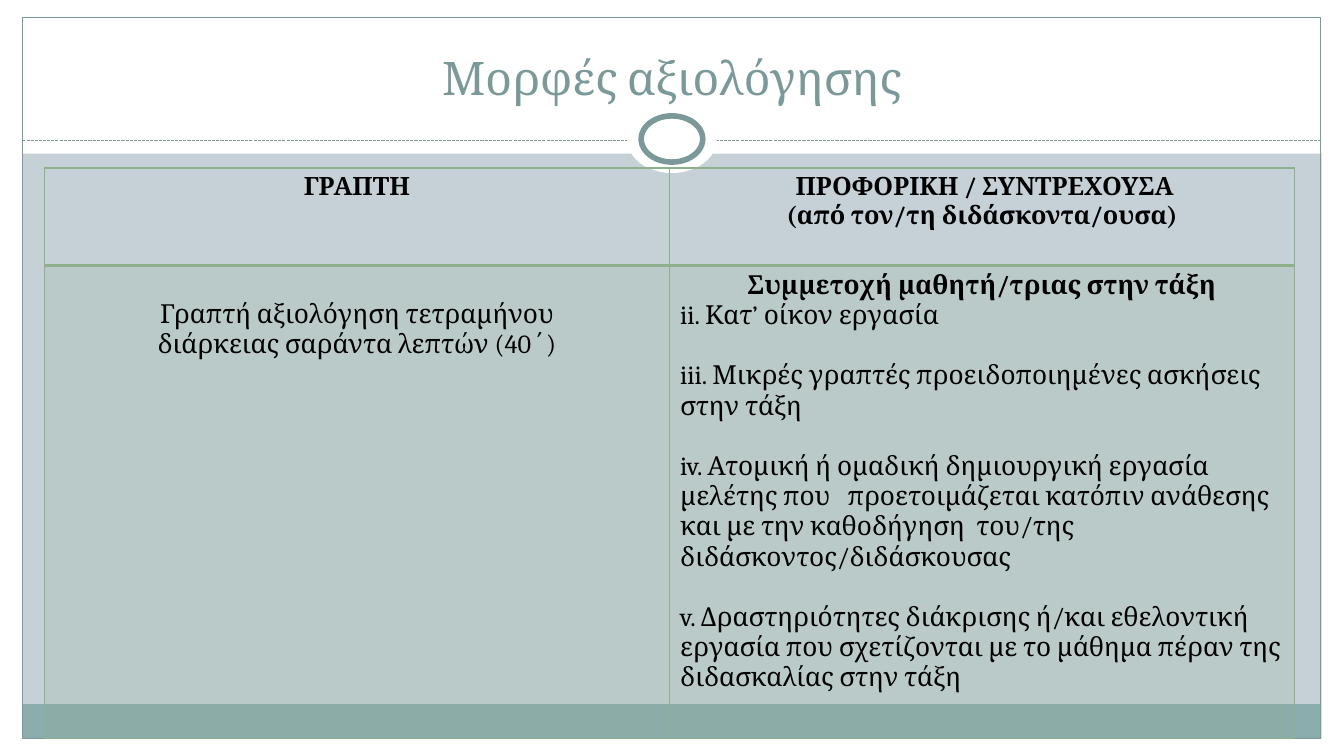
import dataclasses
import typing

import lxml.etree
import pptx
import pptx.dml.color
import pptx.enum.dml
import pptx.enum.shapes
import pptx.enum.text
import pptx.oxml
import pptx.oxml.ns
import pptx.util

Pt = pptx.util.Pt
SHAPE = pptx.enum.shapes.MSO_SHAPE
ALIGN = pptx.enum.text.PP_ALIGN
qn = pptx.oxml.ns.qn

FONT = "Cambria"
COLORS = {
    "ground": "C5D1D7",
    "white": "FFFFFF",
    "band": "8CADAE",
    "teal": "7C999A",
    "green": "8FB08C",
    "black": "000000",
}
WIDTH, HEIGHT = 960, 540
HEAD, BODY = 18, 18.7
GAP = 21.9  # one body line between list items


@dataclasses.dataclass
class Panel:
    kind: SHAPE
    left: float
    top: float
    width: float
    height: float
    fill: typing.Optional[str] = None
    line: typing.Optional[str] = None
    weight: float = 0.75


@dataclasses.dataclass
class Para:
    text: str
    size: float = BODY
    bold: bool = False
    align: ALIGN = ALIGN.LEFT
    before: float = 0


@dataclasses.dataclass
class Cell:
    paras: typing.List[Para]
    top_margin: float = 3.6
    tinted: bool = False
    bottom_line: float = 1


PANELS = [
    Panel(SHAPE.RECTANGLE, 0, 528, WIDTH, 12, "white"),
    Panel(SHAPE.RECTANGLE, 0, 0, WIDTH, 109.7, "white"),
    Panel(SHAPE.RECTANGLE, 0, 0, 16, HEIGHT, "white"),
    Panel(SHAPE.RECTANGLE, 944, 0, 16, HEIGHT, "white"),
    Panel(SHAPE.RECTANGLE, 16, 503, 927.5, 24.5, "band"),
    Panel(SHAPE.RECTANGLE, 16, 12.2, 927.5, 515.5, None, "teal"),
]
RINGS = [
    Panel(SHAPE.OVAL, 448, 75.6, 64, 48, "white"),
    Panel(SHAPE.OVAL, 458, 82.8, 44, 33, "white", "teal", 4),
]

CELLS = [
    [
        Cell([Para("ΓΡΑΠΤΗ", HEAD, True, ALIGN.CENTER)], bottom_line=2),
        Cell([
            Para(" ΠΡΟΦΟΡΙΚΗ / ΣΥΝΤΡΕΧΟΥΣΑ", HEAD, True, ALIGN.CENTER),
            Para("(από τον/τη διδάσκοντα/ουσα)", HEAD, True, ALIGN.CENTER),
        ], bottom_line=2),
    ],
    [
        Cell([
            Para("Γραπτή αξιολόγηση τετραμήνου", align=ALIGN.CENTER),
            Para("διάρκειας σαράντα λεπτών (40΄)", align=ALIGN.CENTER),
        ], top_margin=24.7, tinted=True),
        Cell([
            Para("Συμμετοχή μαθητή/τριας στην τάξη", bold=True, align=ALIGN.CENTER),
            Para("ii. Κατ’ οίκον εργασία"),
            Para("iii. Μικρές γραπτές προειδοποιημένες ασκήσεις στην τάξη", before=GAP),
            Para("iv. Ατομική ή ομαδική δημιουργική εργασία μελέτης που   "
                 "προετοιμάζεται κατόπιν ανάθεσης και με την καθοδήγηση  "
                 "του/της διδάσκοντος/διδάσκουσας", before=GAP),
            Para("v. Δραστηριότητες διάκρισης ή/και εθελοντική εργασία που "
                 "σχετίζονται με το μάθημα πέραν της διδασκαλίας στην τάξη", before=GAP),
        ], tinted=True),
    ],
]


def rgb(name: str) -> pptx.dml.color.RGBColor:
    return pptx.dml.color.RGBColor.from_string(COLORS[name])


def add_panel(shapes, panel: Panel) -> None:
    s = shapes.add_shape(panel.kind, Pt(panel.left), Pt(panel.top),
                         Pt(panel.width), Pt(panel.height))
    s.shadow.inherit = False
    if panel.fill:
        s.fill.solid()
        s.fill.fore_color.rgb = rgb(panel.fill)
    else:
        s.fill.background()
    if panel.line:
        s.line.color.rgb = rgb(panel.line)
        s.line.width = Pt(panel.weight)
    else:
        s.line.fill.background()


def add_rule(shapes, left: float, right: float, y: float) -> None:
    s = shapes.add_connector(pptx.enum.shapes.MSO_CONNECTOR.STRAIGHT,
                             Pt(left), Pt(y), Pt(right), Pt(y))
    s.line.color.rgb = rgb("teal")
    s.line.width = Pt(0.75)
    s.line.dash_style = pptx.enum.dml.MSO_LINE.SQUARE_DOT
    lxml.etree.SubElement(s._element.spPr, qn("a:effectLst"))


def write(tf, paras: typing.List[Para], color: str) -> None:
    for i, para in enumerate(paras):
        p = tf.add_paragraph() if i else tf.paragraphs[0]
        p.alignment = para.align
        p.space_before = Pt(para.before)
        r = p.add_run()
        r.text = para.text
        r.font.name = FONT
        r.font.size = Pt(para.size)
        r.font.bold = para.bold
        r.font.color.rgb = rgb(color)


def set_border(tc_pr, index: int, side: str, weight: float) -> None:
    ln = lxml.etree.Element(qn("a:ln" + side), w=str(Pt(weight)))
    fill = lxml.etree.SubElement(ln, qn("a:solidFill"))
    lxml.etree.SubElement(fill, qn("a:srgbClr"), val=COLORS["green"])
    tc_pr.insert(index, ln)


def fill_cell(cell, content: Cell) -> None:
    cell.margin_left = cell.margin_right = Pt(7.7)
    cell.margin_top = Pt(content.top_margin)
    cell.margin_bottom = Pt(3.6)
    write(cell.text_frame, content.paras, "black")
    tc_pr = cell._tc.get_or_add_tcPr()
    if content.tinted:
        cell.fill.solid()
        cell.fill.fore_color.rgb = rgb("green")
        color = tc_pr.find(".//" + qn("a:srgbClr"))
        lxml.etree.SubElement(color, qn("a:alpha"), val="20000")
    else:
        cell.fill.background()
    for index, side in enumerate("LRTB"):
        set_border(tc_pr, index, side, content.bottom_line if side == "B" else 1)


def main() -> None:
    prs = pptx.Presentation()
    prs.slide_width, prs.slide_height = Pt(WIDTH), Pt(HEIGHT)
    slide = prs.slides.add_slide(prs.slide_layouts[6])
    slide.background.fill.solid()
    slide.background.fill.fore_color.rgb = rgb("ground")

    # Frame, dashed rule and ring
    for panel in PANELS:
        add_panel(slide.shapes, panel)
    add_rule(slide.shapes, 16, 943.5, 100.6)
    for ring in RINGS:
        add_panel(slide.shapes, ring)

    # Title
    s = slide.shapes.add_textbox(Pt(32), Pt(18), Pt(896), Pt(60))
    tf = s.text_frame
    tf.word_wrap = True
    tf.vertical_anchor = pptx.enum.text.MSO_ANCHOR.BOTTOM
    write(tf, [Para("Μορφές αξιολόγησης", 33, align=ALIGN.CENTER)], "teal")

    # Assessment table
    heights = (69.7, 337.8)
    table = slide.shapes.add_table(2, 2, Pt(31.7), Pt(120), Pt(893),
                                   Pt(sum(heights))).table
    table.first_row = table.horz_banding = False
    for column in table.columns:
        column.width = Pt(446.5)
    for i, height in enumerate(heights):
        table.rows[i].height = Pt(height)
        for j, content in enumerate(CELLS[i]):
            fill_cell(table.cell(i, j), content)

    prs.save("out.pptx")


if __name__ == "__main__":
    main()
